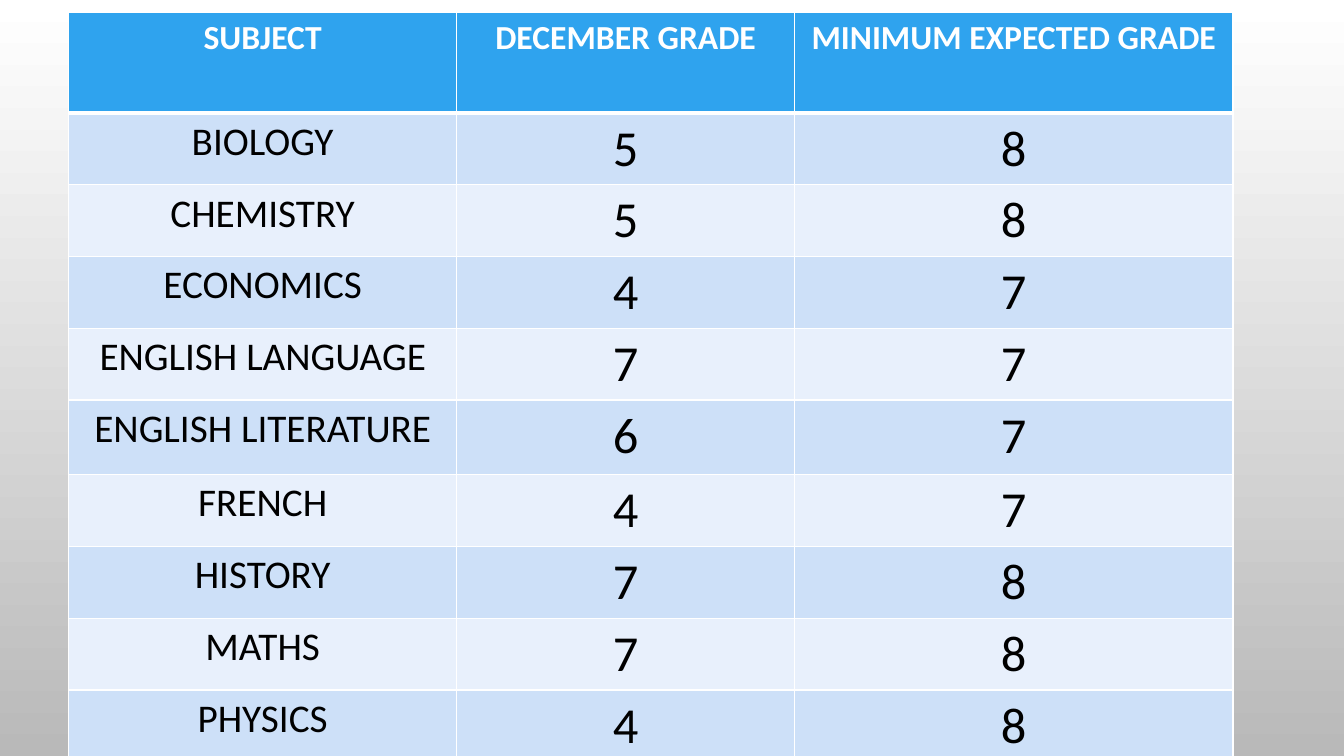
from lxml import etree
from pptx import Presentation
from pptx.dml.color import RGBColor
from pptx.enum.text import PP_ALIGN
from pptx.oxml.ns import qn
from pptx.util import Inches, Pt

CENTER = PP_ALIGN.CENTER
FONT = "Calibri"
COLORS = {
    "white": "FFFFFF",
    "gray": "B9B9B9",
    "head": "2FA3EE",
    "dark": "CDE0F8",
    "light": "E8F0FC",
    "text": "000000",
}
HEADS = ["SUBJECT", "DECEMBER GRADE", "MINIMUM EXPECTED GRADE"]
GRADES = [
    ("BIOLOGY", 5, 8),
    ("CHEMISTRY", 5, 8),
    ("ECONOMICS", 4, 7),
    ("ENGLISH LANGUAGE", 7, 7),
    ("ENGLISH LITERATURE", 6, 7),
    ("FRENCH", 4, 7),
    ("HISTORY", 7, 8),
    ("MATHS", 7, 8),
    ("PHYSICS", 4, 8),
]
WIDTHS = [3.85, 3.35, 4.35]
HEIGHTS = [1, 0.68, 0.68, 0.68, 0.7, 0.74, 0.68, 0.68, 0.68, 0.68]


def rgb(name):
    return RGBColor.from_string(COLORS[name])


def add_edge(cell, tag, width):
    props = cell._tc.get_or_add_tcPr()
    line = etree.SubElement(props, qn(tag), w=str(Pt(width)))
    fill = etree.SubElement(line, qn("a:solidFill"))
    etree.SubElement(fill, qn("a:srgbClr"), val=COLORS["white"])


def style_cell(cell, text, row, col):
    # Borders, with a thick rule under the header
    edges = {"a:lnL": 1, "a:lnR": 1,
             "a:lnT": 3 if row == 1 else 1,
             "a:lnB": 3 if row == 0 else 1}
    for tag, width in edges.items():
        add_edge(cell, tag, width)

    # Banded fill
    head = row == 0
    band = "head" if head else "dark" if row % 2 else "light"
    cell.fill.solid()
    cell.fill.fore_color.rgb = rgb(band)

    # Text
    cell.text = str(text)
    para = cell.text_frame.paragraphs[0]
    para.alignment = CENTER
    font = para.font
    font.name = FONT
    font.size = Pt(24 if head else 36 if col else 28)
    font.bold = head
    font.color.rgb = rgb("white" if head else "text")


def add_grades(slide, left, top):
    rows = [HEADS, *GRADES]
    table = slide.shapes.add_table(
        len(rows), len(HEADS), Inches(left), Inches(top),
        Inches(sum(WIDTHS)), Inches(sum(HEIGHTS))).table
    for col, width in zip(table.columns, WIDTHS):
        col.width = Inches(width)
    for line, height in zip(table.rows, HEIGHTS):
        line.height = Inches(height)
    for r, row in enumerate(rows):
        for c, text in enumerate(row):
            style_cell(table.cell(r, c), text, r, c)


def set_back(slide):
    fill = slide.background.fill
    fill.gradient()
    fill.gradient_angle = 270
    for stop, name, place in zip(fill.gradient_stops, ("white", "gray"), (0, 1)):
        stop.color.rgb = rgb(name)
        stop.position = place


def main():
    deck = Presentation()
    deck.slide_width = Inches(13.33)
    deck.slide_height = Inches(7.5)
    slide = deck.slides.add_slide(deck.slide_layouts[6])
    set_back(slide)
    add_grades(slide, 0.68, 0.12)
    deck.save("out.pptx")


if __name__ == "__main__":
    main()
